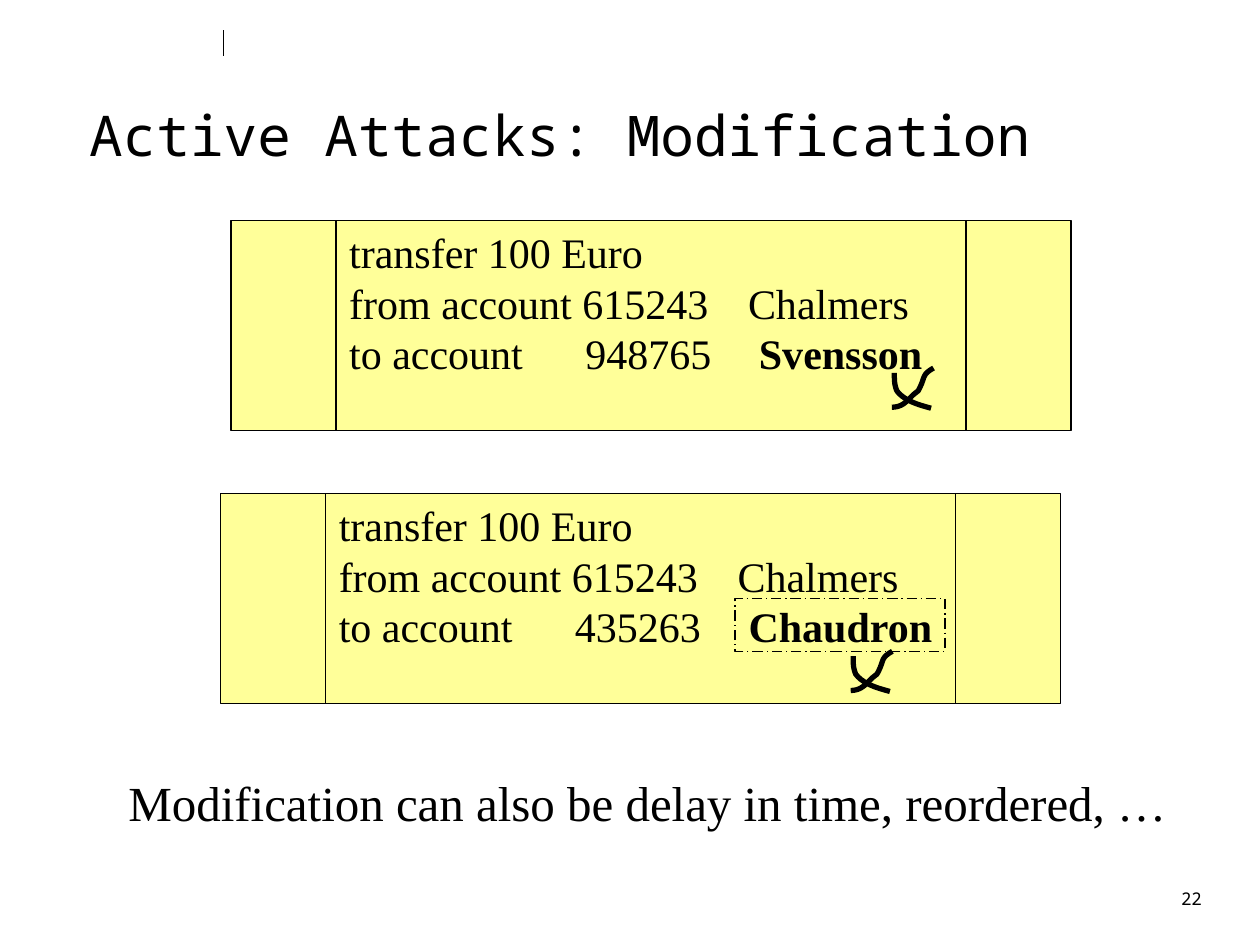
from lxml.etree import SubElement
from pptx import Presentation
from pptx.dml.color import RGBColor
from pptx.enum.dml import MSO_LINE
from pptx.enum.shapes import MSO_CONNECTOR, MSO_SHAPE
from pptx.enum.text import MSO_ANCHOR, PP_ALIGN
from pptx.oxml.ns import qn
from pptx.util import Cm, Pt

BLACK = RGBColor(0x00, 0x00, 0x00)
YELLOW = RGBColor(0xFF, 0xFF, 0x99)
MONO = "Noto Sans Mono"
SERIF = "Times New Roman"

UPSTROKE = [(0.84, 0), (0.58, 0.15), (0.69, 0.18), (0.53, 0.46), (0.51, 0.48),
            (0.46, 0.51), (0.41, 0.56), (0.28, 0.69), (0.2, 0.79), (0, 0.79)]
DOWNSTROKE = [(0.79, 0.81), (0.53, 0.74), (0.25, 0.66), (0.1, 0.46),
              (0.05, 0.33), (0.05, 0.25), (0.05, 0.1)]
STEPS = 10


def add_text(s, x, y, w, h, paragraphs, font=SERIF, size=24,
             align=PP_ALIGN.LEFT, anchor=MSO_ANCHOR.TOP):
    tf = s.shapes.add_textbox(Cm(x), Cm(y), Cm(w), Cm(h)).text_frame
    tf.word_wrap = True
    tf.vertical_anchor = anchor
    for i, (runs, tabs) in enumerate(paragraphs):
        p = tf.add_paragraph() if i else tf.paragraphs[0]
        p.alignment = align
        if tabs:
            tab_list = SubElement(p._p.get_or_add_pPr(), qn("a:tabLst"))
            for pos in tabs:
                SubElement(tab_list, qn("a:tab"), pos=str(Cm(pos)), algn="l")
        for text, bold in runs:
            r = p.add_run()
            r.text = text
            r.font.name = font
            r.font.size = Pt(size)
            r.font.bold = bold
            r.font.color.rgb = BLACK


def add_line_of_text(s, x, y, w, h, text, **kwargs):
    add_text(s, x, y, w, h, [([(text, False)], ())], **kwargs)


def add_box(s, kind, x, y, w, h, fill=None, dash=None):
    sp = s.shapes.add_shape(kind, Cm(x), Cm(y), Cm(w), Cm(h))
    sp.shadow.inherit = False
    if fill is None:
        sp.fill.background()
    else:
        sp.fill.solid()
        sp.fill.fore_color.rgb = fill
    sp.line.color.rgb = BLACK
    sp.line.width = Pt(0.75)
    if dash is not None:
        sp.line.dash_style = dash


def curve_points(points):
    for i in range(0, len(points) - 1, 3):
        a, b, c, d = points[i:i + 4]
        for step in range(1, STEPS + 1):
            t = step / STEPS
            u = 1 - t
            yield tuple(u**3 * a[k] + 3 * u * u * t * b[k]
                        + 3 * u * t * t * c[k] + t**3 * d[k] for k in (0, 1))


def add_signature(s, x, y):
    for stroke in (UPSTROKE, DOWNSTROKE):
        x0, y0 = stroke[0]
        fb = s.shapes.build_freeform(Cm(x + x0), Cm(y + y0))
        fb.add_line_segments([(Cm(x + px), Cm(y + py))
                              for px, py in curve_points(stroke)], close=False)
        sp = fb.convert_to_shape()
        sp.shadow.inherit = False
        sp.fill.background()
        sp.line.color.rgb = BLACK
        sp.line.width = Pt(3)


def add_transfer(s, x, y, account, owner, sign_x, sign_y):
    add_box(s, MSO_SHAPE.FLOWCHART_PREDEFINED_PROCESS, x, y, 16.93, 4.23, YELLOW)
    add_text(s, x + 2.13, y, 12.6, 3.33, [
        ([("transfer 100 Euro", False)], ()),
        ([("from account 615243\tChalmers", False)], (8.04,)),
        ([(f"to account\t{account}\t", False), (owner, True)], (4.76, 8.26)),
    ])
    add_signature(s, sign_x, sign_y)


def add_rule(s, x, y1, y2):
    line = s.shapes.add_connector(MSO_CONNECTOR.STRAIGHT, Cm(x), Cm(y1), Cm(x), Cm(y2))
    line.line.color.rgb = BLACK
    line.line.width = Pt(0.5)
    SubElement(line._element.spPr, qn("a:effectLst"))


def main():
    prs = Presentation()
    prs.slide_width, prs.slide_height = Cm(25.4), Cm(19.05)
    s = prs.slides.add_slide(prs.slide_layouts[6])
    add_rule(s, 4.5, 0.61, 1.12)
    add_line_of_text(s, 1.55, 1.93, 22.28, 1.55, "Active Attacks: Modification",
                     font=MONO, size=32, anchor=MSO_ANCHOR.MIDDLE)
    add_line_of_text(s, 19.2, 17.78, 5.28, 0.84, "22",
                     font=MONO, size=10, align=PP_ALIGN.RIGHT)
    add_transfer(s, 4.66, 4.45, "948765", "Svensson", 17.98, 7.42)
    add_transfer(s, 4.45, 9.95, "435263", "Chaudron", 17.15, 13.13)
    add_box(s, MSO_SHAPE.RECTANGLE, 14.82, 12.07, 4.23, 1.06,
            dash=MSO_LINE.LONG_DASH_DOT)
    add_line_of_text(s, 2.34, 15.44, 22, 1.45,
                     "Modification can also be delay in time, reordered, …",
                     size=28)
    prs.save("out.pptx")


if __name__ == "__main__":
    main()
